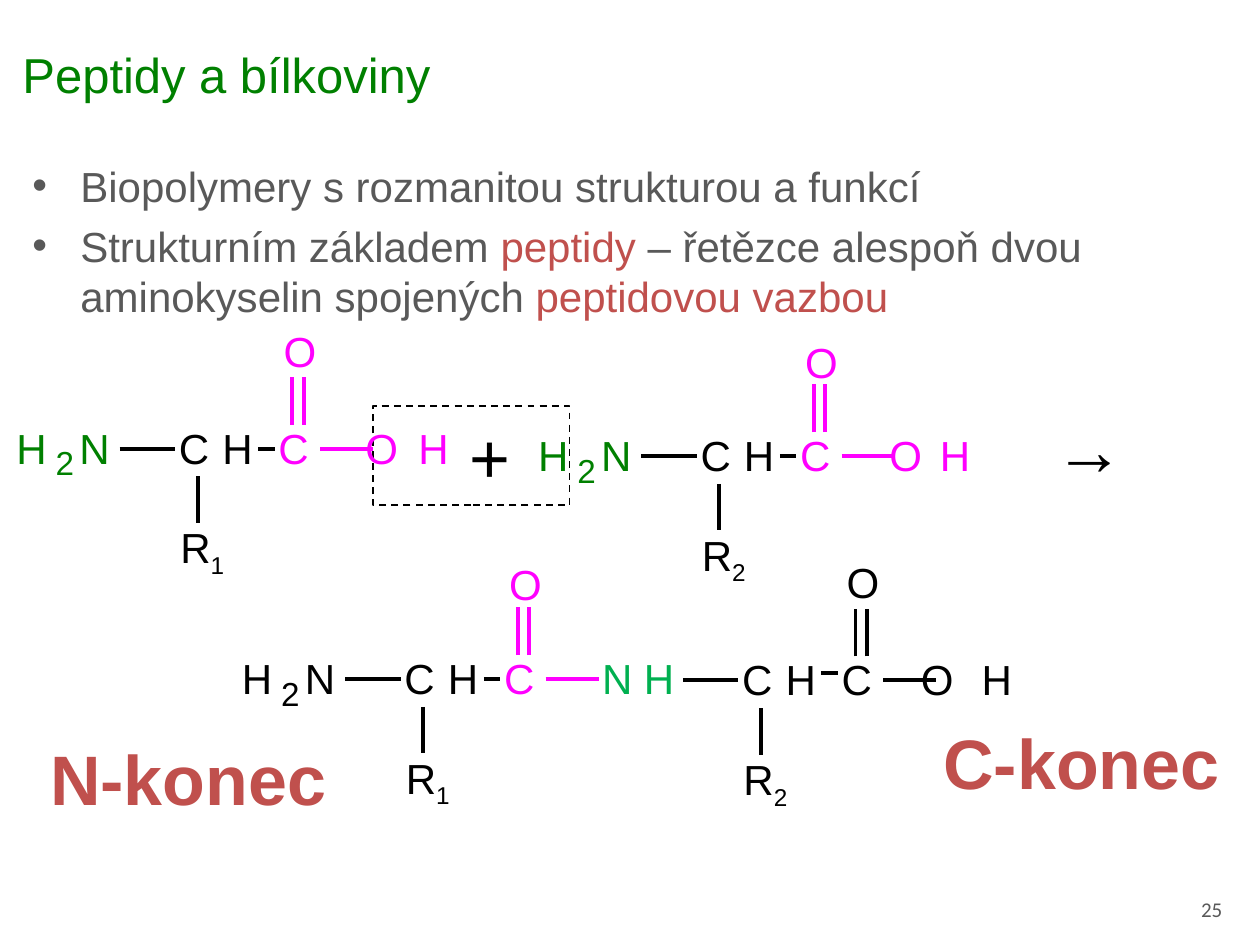
from pptx import Presentation
from pptx.dml.color import RGBColor
from pptx.enum.dml import MSO_LINE
from pptx.enum.shapes import MSO_CONNECTOR, MSO_SHAPE
from pptx.enum.text import MSO_ANCHOR, PP_ALIGN
from pptx.oxml.ns import qn
from pptx.util import Inches, Pt
from lxml.etree import SubElement

BLACK, GREEN, LIGHT_GREEN = "000000", "008000", "00B050"
MAGENTA, RED, GRAY = "FF00FF", "C0504D", "595959"

TITLE = "Peptidy a bílkoviny"
BULLETS = [
    [("Biopolymery s rozmanitou strukturou a funkcí", GRAY)],
    [("Strukturním základem ", GRAY), ("peptidy", RED),
     (" – řetězce alespoň dvou aminokyselin spojených ", GRAY),
     ("peptidovou vazbou", RED)],
]
CHAIN_ENDS = [("N-konec", (0.3, 5.73, 2.45, 0.64)),
              ("C-konec", (7.39, 5.6, 2.47, 0.83))]

# Each residue is placed by the top left corner of its central carbon.
# tail: the two atoms after the carboxyl carbon, with distance and width of the first
RESIDUES = [
    dict(at=(1.42, 3.35), amino=GREEN, acid=MAGENTA, index="1",
         tail=("O", "H", MAGENTA, 1.48, 0.57), oxygen_rise=0.77),
    dict(at=(5.56, 3.41), amino=GREEN, acid=MAGENTA, index="2",
         tail=("O", "H", MAGENTA, 1.5, 0.57), oxygen_rise=0.74),
    dict(at=(3.21, 5.18), amino=BLACK, acid=MAGENTA, index="1",
         tail=("N", "H", LIGHT_GREEN, 1.57, 0.57), oxygen_rise=0.75),
    dict(at=(5.89, 5.19), amino=None, acid=BLACK, index="2",
         tail=("O", "H", BLACK, 1.42, 0.73), oxygen_rise=0.77, middle_bond=0.15),
]


def color(value):
    return RGBColor.from_string(value)


def write(para, text, size, tint, name="Arial", bold=False, subscript=False):
    span = para.add_run()
    span.text = text
    formats = {"size": Pt(size), "name": name, "bold": bold}
    for key, value in formats.items():
        setattr(span.font, key, value)
    span.font.color.rgb = color(tint)
    if subscript:
        span.font._element.set("baseline", "-25000")


def set_frame(frame, insets=(0.1, 0.05, 0.1, 0.05), wrap=True, anchor=MSO_ANCHOR.TOP):
    left, top, right, bottom = map(Inches, insets)
    formats = {"margin_left": left, "margin_top": top, "margin_right": right,
               "margin_bottom": bottom, "word_wrap": wrap, "vertical_anchor": anchor}
    for key, value in formats.items():
        setattr(frame, key, value)


def add_text(page, place, spans, align=PP_ALIGN.LEFT, **frame_format):
    """Add a one-paragraph box; spans are dicts of arguments for write()."""
    box = page.shapes.add_textbox(*map(Inches, place))
    set_frame(box.text_frame, **frame_format)
    para = box.text_frame.paragraphs[0]
    para.alignment = align
    for span in spans:
        write(para, **span)
    return box


def add_atom(page, symbol, place, tint, size=24, index=None, align=PP_ALIGN.CENTER):
    spans = [dict(text=symbol, size=size, tint=tint)]
    if index:
        spans.append(dict(text=index, size=size, tint=tint, subscript=True))
    add_text(page, place, spans, align, insets=(0, 0, 0, 0), wrap=False)


def add_bond(page, start, end, tint):
    bond = page.shapes.add_connector(MSO_CONNECTOR.STRAIGHT, *map(Inches, start + end))
    bond.line.color.rgb = color(tint)
    bond.line.width = Pt(2.25)
    SubElement(bond._element.spPr, qn("a:effectLst"))


def add_residue(page, at, amino, acid, index, tail, oxygen_rise, middle_bond=0.21):
    x, y = at
    first, second, tail_tint, tail_x, tail_width = tail
    bonds = [
        (-0.47, 0.21, -0.03, 0.21, BLACK),
        (0.63, middle_bond, 0.76, middle_bond, BLACK),
        (0.15, 0.43, 0.15, 0.8, BLACK),
        (1.12, 0.21, 1.54, 0.21, acid),
        (0.9, 0.02, 0.9, -0.36, acid),
        (0.99, 0.02, 0.99, -0.36, acid),
    ]
    for x1, y1, x2, y2, tint in bonds:
        add_bond(page, (x + x1, y + y1), (x + x2, y + y2), tint)

    if amino:
        add_atom(page, "H", (x - 1.29, y, 0.24, 0.4), amino)
        add_atom(page, "2", (x - 0.98, y + 0.16, 0.15, 0.32), amino, size=19)
        add_atom(page, "N", (x - 0.79, y, 0.24, 0.4), amino)
    add_atom(page, "C", (x, y, 0.24, 0.4), BLACK)
    add_atom(page, "H", (x + 0.31, y, 0.31, 0.4), BLACK)
    add_atom(page, "C", (x + 0.79, y, 0.24, 0.4), acid)
    add_atom(page, "R", (x, y + 0.79, 0.37, 0.41), BLACK, index=index)
    add_atom(page, first, (x + tail_x, y, tail_width, 0.4), tail_tint,
             align=PP_ALIGN.LEFT)
    add_atom(page, second, (x + 1.9, y, 0.24, 0.4), tail_tint)
    add_atom(page, "O", (x + 0.83, y - oxygen_rise, 0.26, 0.4), acid)


def add_bullets(page):
    box = page.shapes.add_textbox(*map(Inches, (0.16, 1.18, 9.77, 1.45)))
    frame = box.text_frame
    set_frame(frame, insets=(0.1, 0.09, 0.1, 0.05))
    for number, spans in enumerate(BULLETS):
        para = frame.add_paragraph() if number else frame.paragraphs[0]
        properties = para._p.get_or_add_pPr()
        properties.set("marL", str(Inches(0.38)))
        properties.set("indent", str(-Inches(0.38)))
        SubElement(properties, qn("a:buFont"), typeface="Arial")
        SubElement(properties, qn("a:buChar"), char="•")
        if number:
            para.space_before = Pt(5.5)
        for text, tint in spans:
            write(para, text, 24, tint)


def add_water_frame(page):
    """Dashed frame around the atoms that leave as water, with the plus sign."""
    frame = page.shapes.add_shape(MSO_SHAPE.RECTANGLE,
                                  *map(Inches, (2.96, 3.22, 1.56, 0.79)))
    frame.shadow.inherit = False
    frame.fill.background()
    frame.line.color.rgb = color(BLACK)
    frame.line.width = Pt(1)
    frame.line.dash_style = MSO_LINE.DASH
    set_frame(frame.text_frame, insets=(0.4, 0.05, 0.1, 0.05), anchor=MSO_ANCHOR.MIDDLE)
    para = frame.text_frame.paragraphs[0]
    para.alignment = PP_ALIGN.CENTER
    write(para, "+", 40, BLACK)


def main():
    deck = Presentation()
    deck.slide_width, deck.slide_height = Inches(10), Inches(7.5)
    page = deck.slides.add_slide(deck.slide_layouts[6])

    add_bullets(page)
    add_text(page, (0.08, 0.08, 8.07, 1.02), [dict(text=TITLE, size=28, tint=GREEN)],
             anchor=MSO_ANCHOR.MIDDLE)
    add_text(page, (9.17, 7.06, 0.63, 0.31),
             [dict(text="25", size=12, tint=GRAY, name="Calibri")],
             PP_ALIGN.RIGHT, anchor=MSO_ANCHOR.MIDDLE)
    add_water_frame(page)
    for residue in RESIDUES:
        add_residue(page, **residue)
    add_text(page, (7.62, 3.16, 2.05, 0.79), [dict(text="→", size=40, tint=BLACK)],
             PP_ALIGN.CENTER, anchor=MSO_ANCHOR.MIDDLE)
    for text, place in CHAIN_ENDS:
        add_text(page, place, [dict(text=text, size=40, tint=RED, bold=True)],
                 insets=(0.1, 0.11, 0.1, 0.05))
    deck.save("out.pptx")


if __name__ == "__main__":
    main()
